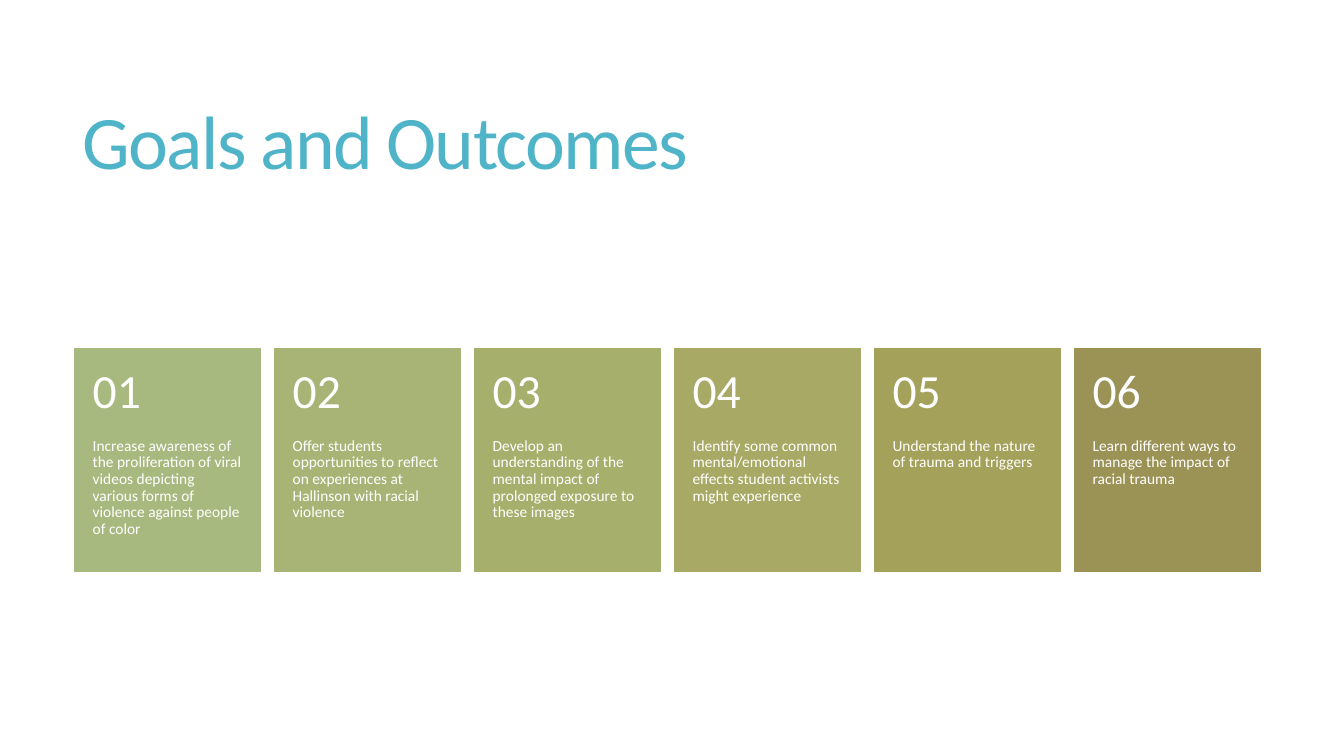
from dataclasses import dataclass

from pptx import Presentation
from pptx.dml.color import RGBColor
from pptx.enum.shapes import MSO_SHAPE
from pptx.enum.text import MSO_ANCHOR, MSO_AUTO_SIZE, PP_ALIGN
from pptx.util import Inches, Pt


@dataclass(frozen=True)
class Theme:
    font: str = "Calibri"
    title_color: str = "50B4C8"
    card_text: str = "FFFFFF"
    title_size: int = 54
    number_size: int = 34
    goal_size: int = 11
    title_tracking: int = -120


@dataclass(frozen=True)
class Box:
    """A region of the slide, in inches."""
    left: float
    top: float
    width: float
    height: float


THEME = Theme()
TITLE_BOX = Box(0.72, 0.55, 11.78, 1.81)
CARDS_BOX = Box(0.74, 3.46, 11.76, 2.21)
CARD_GAP = 0.14
NUMBER_SHARE = 0.4
INSET = 0.18

GOALS = [
    ("A8B97F", "Increase awareness of the proliferation of viral videos depicting "
               "various forms of violence against people of color"),
    ("A7B476", "Offer students opportunities to reflect on experiences at "
               "Hallinson with racial violence"),
    ("A7AF6D", "Develop an understanding of the mental impact of prolonged "
               "exposure to these images"),
    ("A7A964", "Identify some common mental/emotional effects student activists "
               "might experience"),
    ("A4A15B", "Understand the nature of trauma and triggers"),
    ("9B9256", "Learn different ways to manage the impact of racial trauma"),
]


def emu(box):
    return [Inches(side) for side in (box.left, box.top, box.width, box.height)]


def write(frame, wording, size, color, line_spacing, space_after=0, **frame_format):
    """Fill a text frame with one left-aligned paragraph and return its run."""
    frame_format = {"word_wrap": True, "auto_size": MSO_AUTO_SIZE.NONE, **frame_format}
    for attribute, setting in frame_format.items():
        setattr(frame, attribute, setting)
    paragraph = frame.paragraphs[0]
    paragraph.alignment = PP_ALIGN.LEFT
    paragraph.line_spacing = line_spacing
    paragraph.space_after = Pt(space_after)
    run = paragraph.add_run()
    run.text = wording
    run.font.name = THEME.font
    run.font.size = Pt(size)
    run.font.color.rgb = RGBColor.from_string(color)
    return run


def add_title(slide, box, wording):
    title = slide.shapes.title
    title.left, title.top, title.width, title.height = emu(box)
    heading = write(title.text_frame, wording, THEME.title_size, THEME.title_color,
                    0.85, vertical_anchor=MSO_ANCHOR.MIDDLE)
    heading.font._element.set("spc", str(THEME.title_tracking))


def add_card(slide, box, number, goal, color):
    """Place a coloured card with its number above its goal."""
    card = slide.shapes.add_shape(MSO_SHAPE.RECTANGLE, *emu(box))
    card.shadow.inherit = False
    card.fill.solid()
    card.fill.fore_color.rgb = card.line.color.rgb = RGBColor.from_string(color)
    card.line.width = Pt(1)

    number_height = box.height * NUMBER_SHARE
    number_box = Box(box.left, box.top, box.width, number_height)
    goal_box = Box(box.left, box.top + number_height, box.width,
                   box.height - number_height)
    parts = [
        (goal_box, goal, THEME.goal_size, MSO_ANCHOR.TOP, 0, 2 * INSET),
        (number_box, f"{number:02}", THEME.number_size, MSO_ANCHOR.MIDDLE, INSET, INSET),
    ]
    for part_box, wording, size, anchor, inset_top, inset_bottom in parts:
        frame = slide.shapes.add_textbox(*emu(part_box)).text_frame
        write(frame, wording, size, THEME.card_text, 0.9, 0.35 * size,
              vertical_anchor=anchor,
              margin_left=Inches(INSET), margin_right=Inches(INSET),
              margin_top=Inches(inset_top), margin_bottom=Inches(inset_bottom))


def add_cards(slide, box, goals):
    """Spread the goals over one row of equal cards."""
    width = (box.width - CARD_GAP * (len(goals) - 1)) / len(goals)
    for index, (color, goal) in enumerate(goals):
        left = box.left + index * (width + CARD_GAP)
        add_card(slide, Box(left, box.top, width, box.height), index + 1, goal, color)


def main():
    presentation = Presentation()
    presentation.slide_width = Inches(13.33)
    presentation.slide_height = Inches(7.5)
    title_only = presentation.slide_layouts.get_by_name("Title Only")
    slide = presentation.slides.add_slide(title_only)
    add_title(slide, TITLE_BOX, "Goals and Outcomes")
    add_cards(slide, CARDS_BOX, GOALS)
    presentation.save("out.pptx")


if __name__ == "__main__":
    main()
